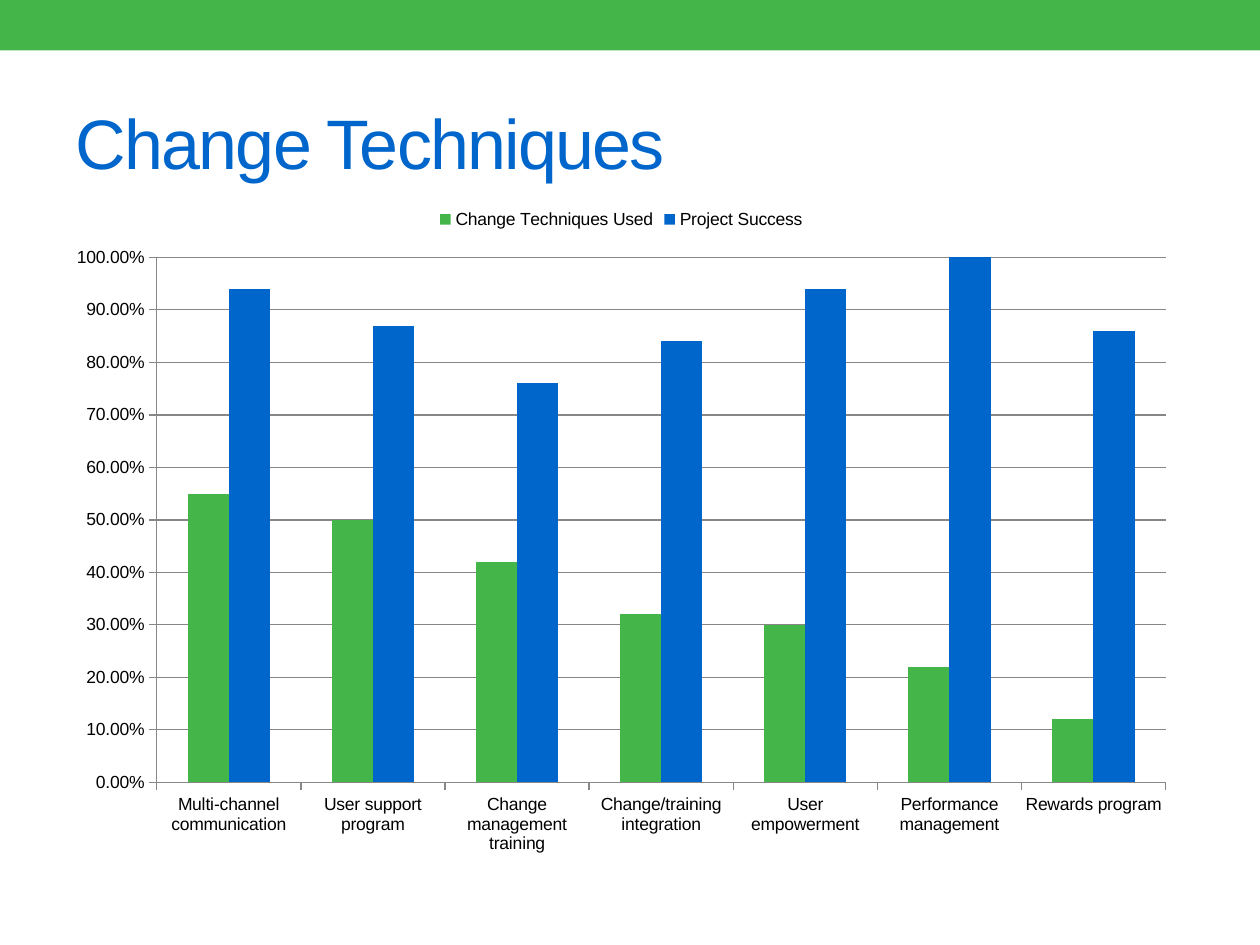
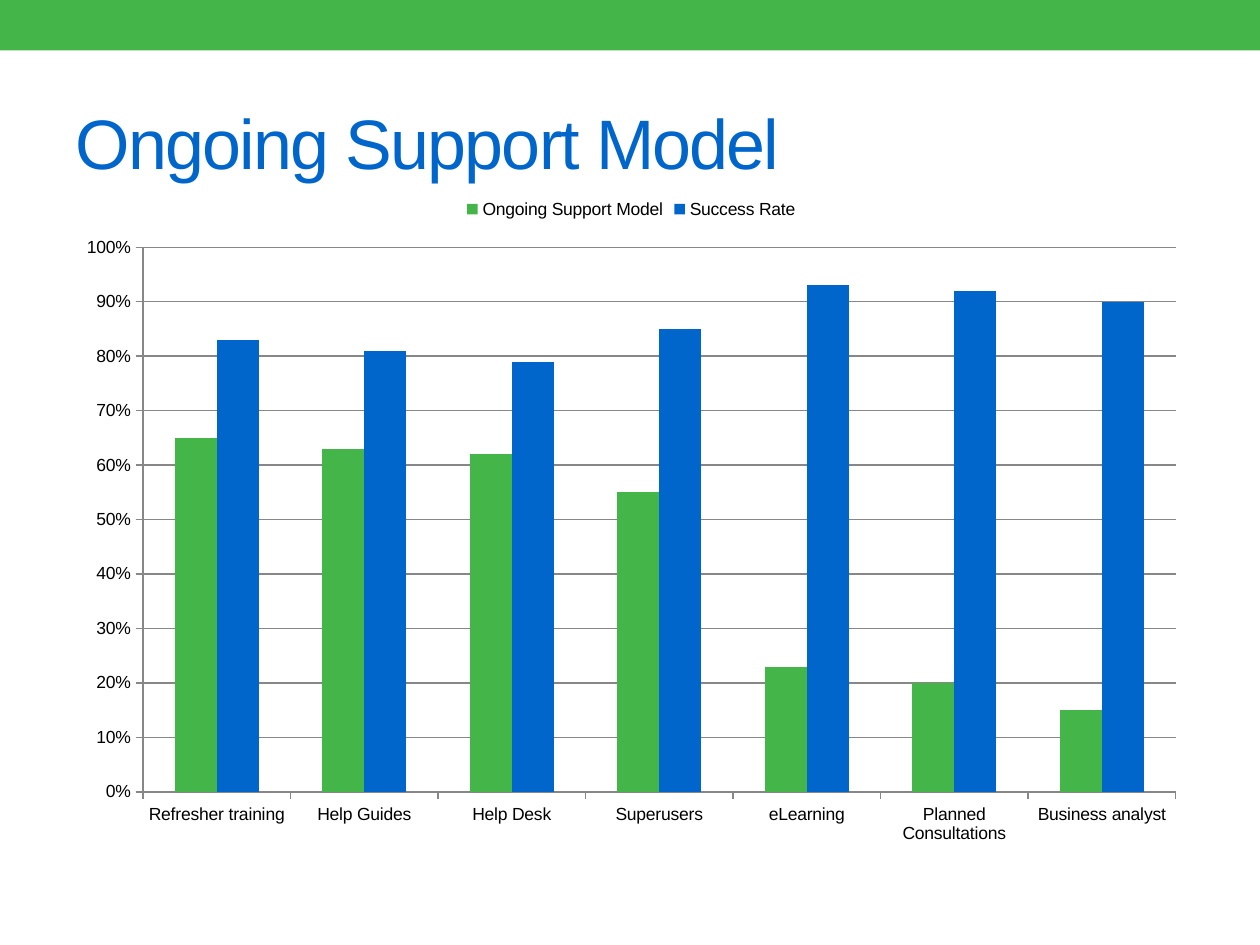
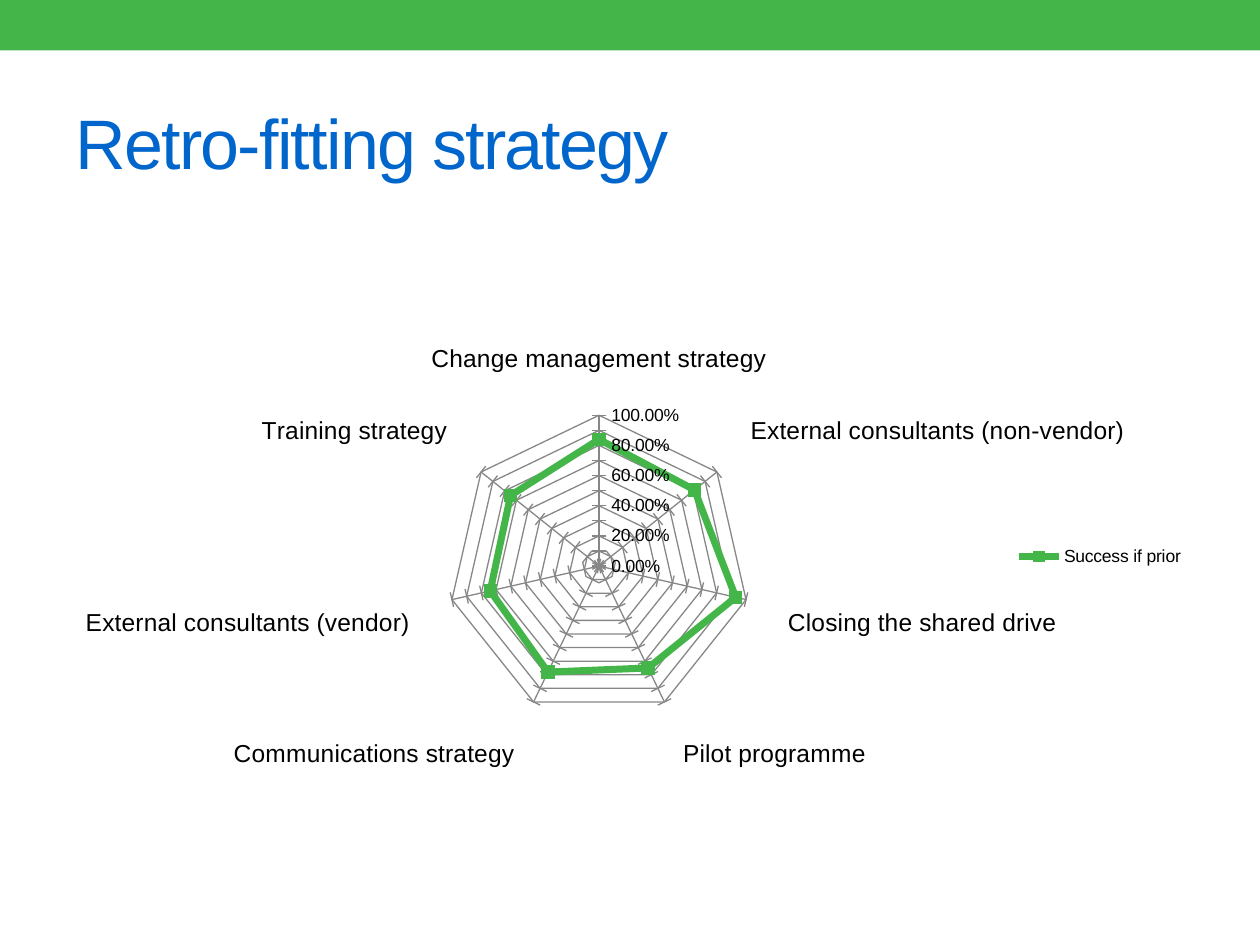
"""Build three survey slides: two column charts and one radar chart."""
from pptx import Presentation
from pptx import util as u
from pptx.chart.data import CategoryChartData
from pptx.dml.color import RGBColor
from pptx.enum import chart as c
from pptx.enum import shapes, text

Pt = u.Pt
GREEN, BLUE, BLACK, GRAY = "44B649", "0066CC", "000000", "878787"
FONT = "Arial"
CHART_WIDTH, CHART_HEIGHT = 648, 384


def color(value):
    return RGBColor.from_string(value)


class Deck:
    def __init__(self):
        self.presentation = Presentation()
        self.presentation.slide_width = Pt(720)
        self.presentation.slide_height = Pt(540)
        self.slide = None

    def add_slide(self, title):
        self.slide = self.presentation.slides.add_slide(self.presentation.slide_layouts[5])
        self.add_band()
        self.set_title(title)

    def add_band(self):
        band = self.slide.shapes.add_shape(
            shapes.MSO_SHAPE.RECTANGLE, 0, 0, self.presentation.slide_width, Pt(28.8))
        band.shadow.inherit = False
        band.fill.solid()
        band.fill.fore_color.rgb = color(GREEN)
        band.line.fill.background()

    def set_title(self, title):
        shape = self.slide.shapes.title
        shape.left, shape.top, shape.width, shape.height = Pt(36), Pt(42), Pt(648), Pt(77.5)
        frame = shape.text_frame
        frame.text = title
        frame.word_wrap = True
        frame.auto_size = text.MSO_AUTO_SIZE.NONE
        frame.vertical_anchor = text.MSO_ANCHOR.MIDDLE
        paragraph = frame.paragraphs[0]
        paragraph.alignment = text.PP_ALIGN.LEFT
        paragraph.font.name, paragraph.font.size = FONT, Pt(40)
        paragraph.font.color.rgb = color(BLUE)
        paragraph.runs[0]._r.get_or_add_rPr().set("spc", "-100")

    def add_chart(self, kind, left, top, categories, series, number_format, legend_position):
        data = CategoryChartData(number_format=number_format)
        data.categories = categories
        for name, values in series.items():
            data.add_series(name, values)
        chart = self.slide.shapes.add_chart(
            kind, Pt(left), Pt(top), Pt(CHART_WIDTH), Pt(CHART_HEIGHT), data).chart
        chart.has_title = False
        chart.font.name, chart.font.size = FONT, Pt(10)
        chart.font.color.rgb = color(BLACK)
        chart.has_legend = True
        chart.legend.position = legend_position
        chart.legend.include_in_layout = False
        chart.plots[0].vary_by_categories = False
        self.style_axes(chart, number_format)
        return chart

    def style_axes(self, chart, number_format):
        value_axis = chart.value_axis
        value_axis.minimum_scale, value_axis.maximum_scale = 0, 1
        value_axis.major_unit = 0.1
        value_axis.has_major_gridlines = True
        value_axis.major_gridlines.format.line.color.rgb = color(GRAY)
        value_axis.tick_labels.number_format = number_format
        value_axis.tick_labels.number_format_is_linked = False
        for axis in (chart.category_axis, value_axis):
            axis.major_tick_mark = c.XL_TICK_MARK.OUTSIDE
            axis.minor_tick_mark = c.XL_TICK_MARK.NONE
            axis.format.line.color.rgb = color(GRAY)

    def add_columns(self, left, top, categories, series, number_format):
        chart = self.add_chart(c.XL_CHART_TYPE.COLUMN_CLUSTERED, left, top, categories,
                               series, number_format, c.XL_LEGEND_POSITION.TOP)
        plot = chart.plots[0]
        plot.gap_width, plot.overlap = 150, 0
        for columns, fill in zip(plot.series, (GREEN, BLUE)):
            columns.invert_if_negative = False
            columns.format.fill.solid()
            columns.format.fill.fore_color.rgb = color(fill)

    def add_radar(self, left, top, categories, series, number_format):
        chart = self.add_chart(c.XL_CHART_TYPE.RADAR_MARKERS, left, top, categories,
                               series, number_format, c.XL_LEGEND_POSITION.RIGHT)
        axis = chart.category_axis
        axis.major_tick_mark = c.XL_TICK_MARK.NONE
        axis.has_major_gridlines = True
        axis.major_gridlines.format.line.color.rgb = color(GRAY)
        axis.tick_labels.font.size = Pt(14)
        ring = chart.plots[0].series[0]
        ring.format.line.width = Pt(4)
        ring.format.line.color.rgb = color(GREEN)
        ring.marker.style = c.XL_MARKER_STYLE.SQUARE
        ring.marker.size = 7
        ring.marker.format.fill.solid()
        ring.marker.format.fill.fore_color.rgb = color(GREEN)
        ring.marker.format.line.color.rgb = color(GREEN)


def main():
    deck = Deck()

    deck.add_slide("Change Techniques")
    deck.add_columns(
        31, 111.6,
        ["Multi-channel communication", "User support program", "Change management training",
         "Change/training integration", "User empowerment", "Performance management",
         "Rewards program"],
        {"Change Techniques Used": [0.55, 0.5, 0.42, 0.32, 0.3, 0.22, 0.12],
         "Project Success": [0.94, 0.87, 0.76, 0.84, 0.94, 1, 0.86]},
        "0.00%")

    deck.add_slide("Ongoing Support Model")
    deck.add_columns(
        36.7, 105.8,
        ["Refresher training", "Help Guides", "Help Desk", "Superusers", "eLearning",
         "Planned Consultations", "Business analyst"],
        {"Ongoing Support Model": [0.65, 0.63, 0.62, 0.55, 0.23, 0.2, 0.15],
         "Success Rate": [0.83, 0.81, 0.79, 0.85, 0.93, 0.92, 0.9]},
        "0%")

    deck.add_slide("Retro-fitting strategy")
    deck.add_radar(
        36, 126,
        ["Change management strategy", "External consultants (non-vendor)",
         "Closing the shared drive", "Pilot programme", "Communications strategy",
         "External consultants (vendor)", "Training strategy"],
        {"Success if prior": [0.84, 0.81, 0.93, 0.75, 0.78, 0.74, 0.75]},
        "0.00%")

    deck.presentation.save("out.pptx")


if __name__ == "__main__":
    main()
